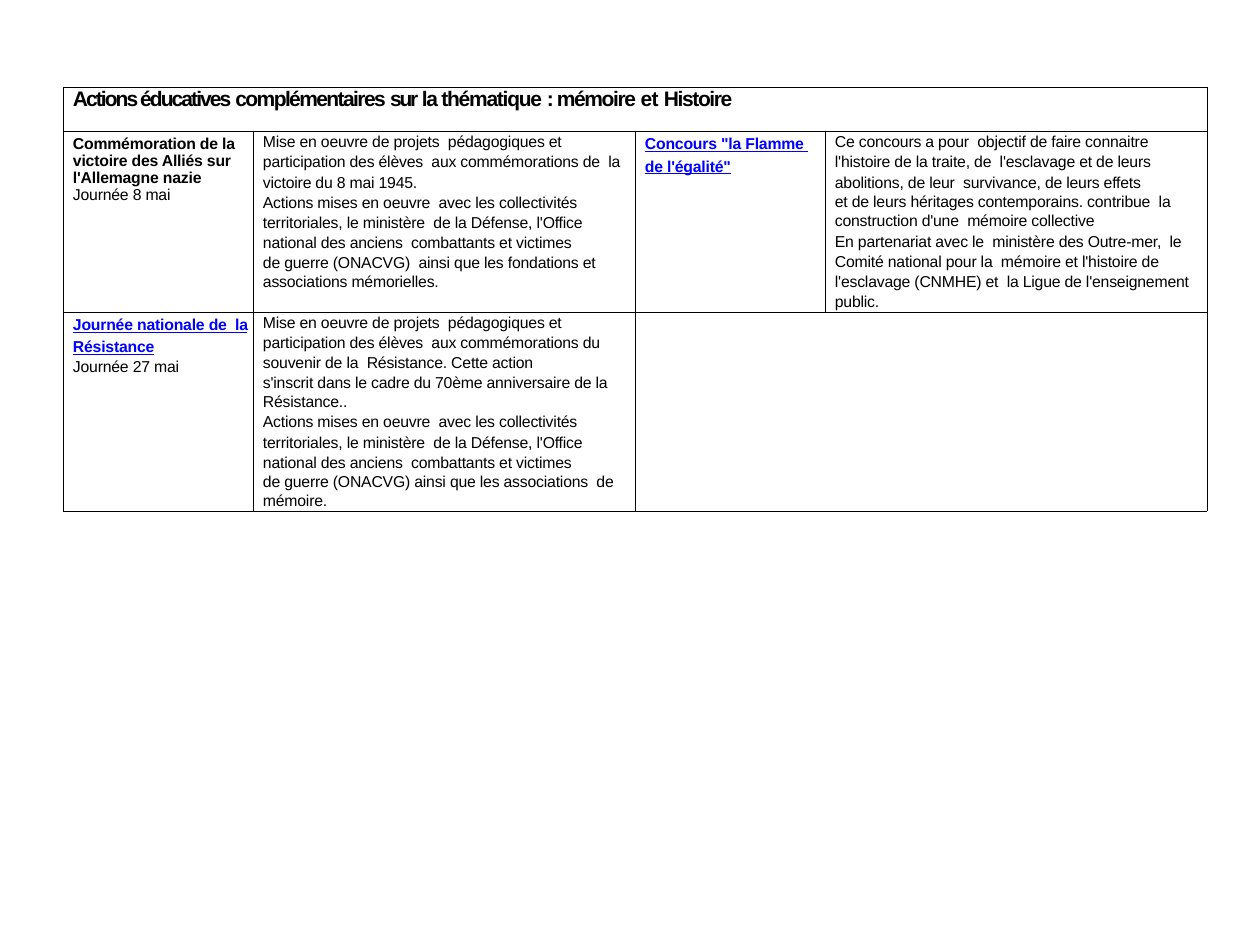
from lxml import etree
from pptx import Presentation
from pptx.dml.color import RGBColor
from pptx.oxml.ns import qn
from pptx.util import Emu, Pt

BLACK = RGBColor(0x00, 0x00, 0x00)
LINK_BLUE = RGBColor(0x00, 0x00, 0xFF)
FONT = "Arial"
PX_PER_INCH = 126

COLUMNS = [190, 382, 190, 382]
ROWS = [44, 181, 199]

# Run styles: size, bold, colour, underline
HEADING = (12, True, BLACK, False)
BOLD = (9, True, BLACK, False)
PLAIN = (9, False, BLACK, False)
LINK = (9, True, LINK_BLUE, True)

# Paragraphs: line spacing (points or a factor), space before, runs
# Runs: text, style, letter spacing in points
TITLE = [(1.0, 3.5, [
    ("Actions éducatives ", HEADING, -1.1),
    ("complémentaires ", HEADING, -0.9),
    ("sur ", HEADING, -1.3),
    ("la thématique ", HEADING, -0.7),
    (": mémoire ", HEADING, -0.8),
    ("et ", HEADING, -0.3),
    ("Histoire", HEADING, -0.8),
])]


def body(line, before, text, style=PLAIN):
    """A paragraph of one run in the table's usual letter spacing."""
    return (line, before, [(text, style, -0.1)])


PROJECTS = ("Mise en oeuvre de projets  pédagogiques et  participation des "
            "élèves  aux commémorations ")
PARTNERS = [
    body(Pt(11.5), 0.2, "Actions mises en oeuvre  avec les collectivités  "
         "territoriales, le ministère  de la Défense, l'Office"),
    body(Pt(11.4), 0.2, "national des anciens  combattants et victimes"),
]

VICTORY_DAY = [
    body(Pt(12.3), 0, "Commémoration de la", BOLD),
    (0.95, 0.3, [
        ("victoire des Alliés sur  l'Allemagne nazie  ", BOLD, -0.1),
        ("Journée 8 mai", PLAIN, -0.1),
    ]),
]
VICTORY_TEXT = [
    body(Pt(11.5), 0.2, PROJECTS + "de  la victoire du 8 mai 1945."),
    *PARTNERS,
    body(Pt(11), 0, "de guerre (ONACVG)  ainsi que les fondations et  "
         "associations mémorielles."),
]
CONTEST = [body(Pt(12.7), 0.1, "Concours \"la Flamme  de l'égalité\"", LINK)]
CONTEST_TEXT = [
    body(Pt(11.5), 0.2, "Ce concours a pour  objectif de faire connaitre  "
         "l'histoire de la traite, de  l'esclavage et de leurs"),
    body(Pt(11.4), 0.2, "abolitions, de leur  survivance, de leurs effets"),
    body(Pt(11), 0, "et de leurs héritages contemporains. contribue  la "
         "construction d'une  mémoire collective"),
    body(Pt(11.5), 0.2, "En partenariat avec le  ministère des Outre-mer,  le "
         "Comité national pour la  mémoire et l'histoire de"),
    body(Pt(11.4), 0.2, "l'esclavage (CNMHE) et  la Ligue de "
         "l'enseignement public."),
]
RESISTANCE_DAY = [
    body(Pt(12.7), 0.1, "Journée nationale de  la Résistance", LINK),
    body(Pt(10.9), 0, "Journée 27 mai"),
]
RESISTANCE_TEXT = [
    body(Pt(11.5), 0.2, PROJECTS + "du"),
    body(Pt(11.4), 0.1, "souvenir de la  Résistance. Cette action"),
    body(Pt(11), 0, "s'inscrit dans le cadre du 70ème anniversaire de "
         "la  Résistance.."),
    *PARTNERS,
    body(Pt(11), 0, "de guerre (ONACVG) ainsi que les associations  "
         "de mémoire."),
]

CONTENT = [
    [TITLE],
    [VICTORY_DAY, VICTORY_TEXT, CONTEST, CONTEST_TEXT],
    [RESISTANCE_DAY, RESISTANCE_TEXT],
]


def px(length):
    return Emu(round(length * 914400 / PX_PER_INCH))


def add_borders(cell):
    """Draw a thin black line on all four sides of a cell."""
    properties = cell._tc.get_or_add_tcPr()
    for index, side in enumerate(("a:lnL", "a:lnR", "a:lnT", "a:lnB")):
        line = etree.Element(qn(side), w=str(Pt(0.5)))
        fill = etree.SubElement(line, qn("a:solidFill"))
        etree.SubElement(fill, qn("a:srgbClr"), val=str(BLACK))
        properties.insert(index, line)


def write_cell(cell, paragraphs):
    frame = cell.text_frame
    for index, (line, before, runs) in enumerate(paragraphs):
        para = frame.paragraphs[0] if index == 0 else frame.add_paragraph()
        para.line_spacing = line
        para.space_before = Pt(before)
        for text, (size, bold, colour, underline), spacing in runs:
            span = para.add_run()
            span.text = text
            span.font.name = FONT
            span.font.size = Pt(size)
            span.font.bold = bold
            span.font.underline = underline
            span.font.color.rgb = colour
            span._r.get_or_add_rPr().set("spc", str(round(spacing * 100)))


def add_actions_table(page, left, top):
    table = page.shapes.add_table(
        len(ROWS), len(COLUMNS), px(left), px(top),
        px(sum(COLUMNS)), px(sum(ROWS))).table
    table.first_row = False
    table.horz_banding = False
    for column, width in zip(table.columns, COLUMNS):
        column.width = px(width)
    for row, height in zip(table.rows, ROWS):
        row.height = px(height)

    # Plain cells with thin borders
    for cell in table.iter_cells():
        cell.margin_left, cell.margin_right = px(10), px(5)
        cell.margin_top = cell.margin_bottom = 0
        cell.fill.background()
        add_borders(cell)

    # Title across the top, empty area at bottom right
    table.cell(0, 0).merge(table.cell(0, 3))
    table.cell(2, 2).merge(table.cell(2, 3))

    for row, contents in enumerate(CONTENT):
        for column, paragraphs in enumerate(contents):
            write_cell(table.cell(row, column), paragraphs)


def main():
    deck = Presentation()
    deck.slide_width, deck.slide_height = px(1260), px(945)
    page = deck.slides.add_slide(deck.slide_layouts[6])
    add_actions_table(page, 63, 87)
    deck.save("out.pptx")


if __name__ == "__main__":
    main()
